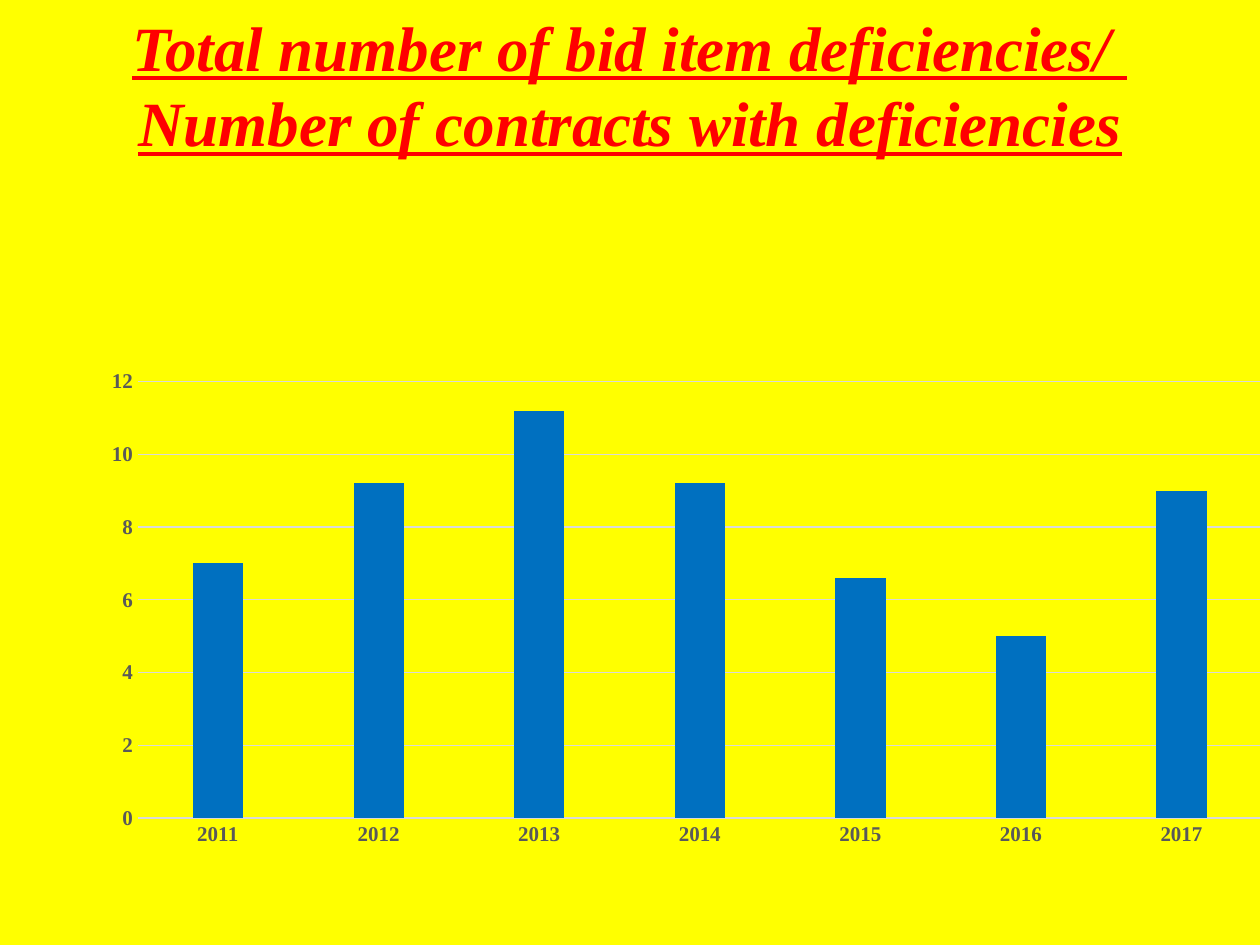
from lxml.etree import SubElement
from pptx import Presentation
from pptx.chart.data import CategoryChartData
from pptx.dml.color import RGBColor
from pptx.enum.chart import XL_CHART_TYPE, XL_TICK_MARK
from pptx.enum.text import MSO_ANCHOR, PP_ALIGN
from pptx.oxml.ns import qn
from pptx.util import Cm, Pt

# Content
TITLE_LINES = [
    "Total number of bid item deficiencies/ ",
    "Number of contracts with deficiencies",
]
DEFICIENCIES = {
    "2011": 7, "2012": 9.2, "2013": 11.2, "2014": 9.2,
    "2015": 6.6, "2016": 5, "2017": 9,
}
PLOT_AREA = {"x": 0.07, "y": 0.4, "w": 0.69, "h": 0.49}  # shares of the chart frame

FONT = "Times New Roman"
YELLOW = RGBColor(0xFF, 0xFF, 0x00)
RED = RGBColor(0xFF, 0x00, 0x00)
BLUE = RGBColor(0x00, 0x70, 0xC0)
GREY = RGBColor(0x59, 0x59, 0x59)
LIGHT_GREY = RGBColor(0xD9, 0xD9, 0xD9)


def style_font(font, size, color):
    font.name = FONT
    font.size = Pt(size)
    font.bold = True
    font.color.rgb = color


def style_line(line):
    line.color.rgb = LIGHT_GREY
    line.width = Pt(0.75)


def place_plot(chart, area):
    """Fix the inner plot area inside the chart frame."""
    plot_area = chart._chartSpace.chart.plotArea
    layout = plot_area.find(qn("c:layout"))
    if layout is None:
        layout = SubElement(plot_area, qn("c:layout"))
        plot_area.insert(0, layout)
    manual = SubElement(layout, qn("c:manualLayout"))
    settings = [("layoutTarget", "inner"), ("xMode", "edge"), ("yMode", "edge")]
    for tag, value in settings + list(area.items()):
        SubElement(manual, qn(f"c:{tag}")).set("val", str(value))


prs = Presentation()
prs.slide_width, prs.slide_height = Cm(25.4), Cm(19.05)
slide = prs.slides.add_slide(prs.slide_layouts[6])
slide.background.fill.solid()
slide.background.fill.fore_color.rgb = YELLOW

# Title
title = slide.shapes.add_textbox(0, 0, prs.slide_width, Cm(3.38)).text_frame
title.word_wrap = True
title.vertical_anchor = MSO_ANCHOR.MIDDLE
heading = title.paragraphs[0]
heading.alignment = PP_ALIGN.CENTER
for number, line in enumerate(TITLE_LINES):
    if number:
        heading.add_line_break()
    run = heading.add_run()
    run.text = line
    style_font(run.font, 36, RED)
    run.font.italic = True
    run.font.underline = True

# Column chart
data = CategoryChartData()
data.categories = list(DEFICIENCIES)
data.add_series("Series 1", list(DEFICIENCIES.values()))
chart = slide.shapes.add_chart(
    XL_CHART_TYPE.COLUMN_CLUSTERED, Cm(0.48), Cm(0.51), Cm(32.84), Cm(17.96), data
).chart
chart.has_title = False
chart.has_legend = False
style_font(chart.font, 12, GREY)
place_plot(chart, PLOT_AREA)

columns = chart.plots[0]
columns.vary_by_categories = False
columns.gap_width = 219
columns.overlap = -27
fill = columns.series[0].format.fill
fill.solid()
fill.fore_color.rgb = BLUE

# Axes
years, counts = chart.category_axis, chart.value_axis
for axis in (years, counts):
    axis.major_tick_mark = axis.minor_tick_mark = XL_TICK_MARK.NONE
    style_font(axis.tick_labels.font, 12, GREY)
style_line(years.format.line)
counts.minimum_scale, counts.maximum_scale, counts.major_unit = 0, 12, 2
counts.format.line.fill.background()
counts.has_major_gridlines = True
style_line(counts.major_gridlines.format.line)

prs.save("out.pptx")
